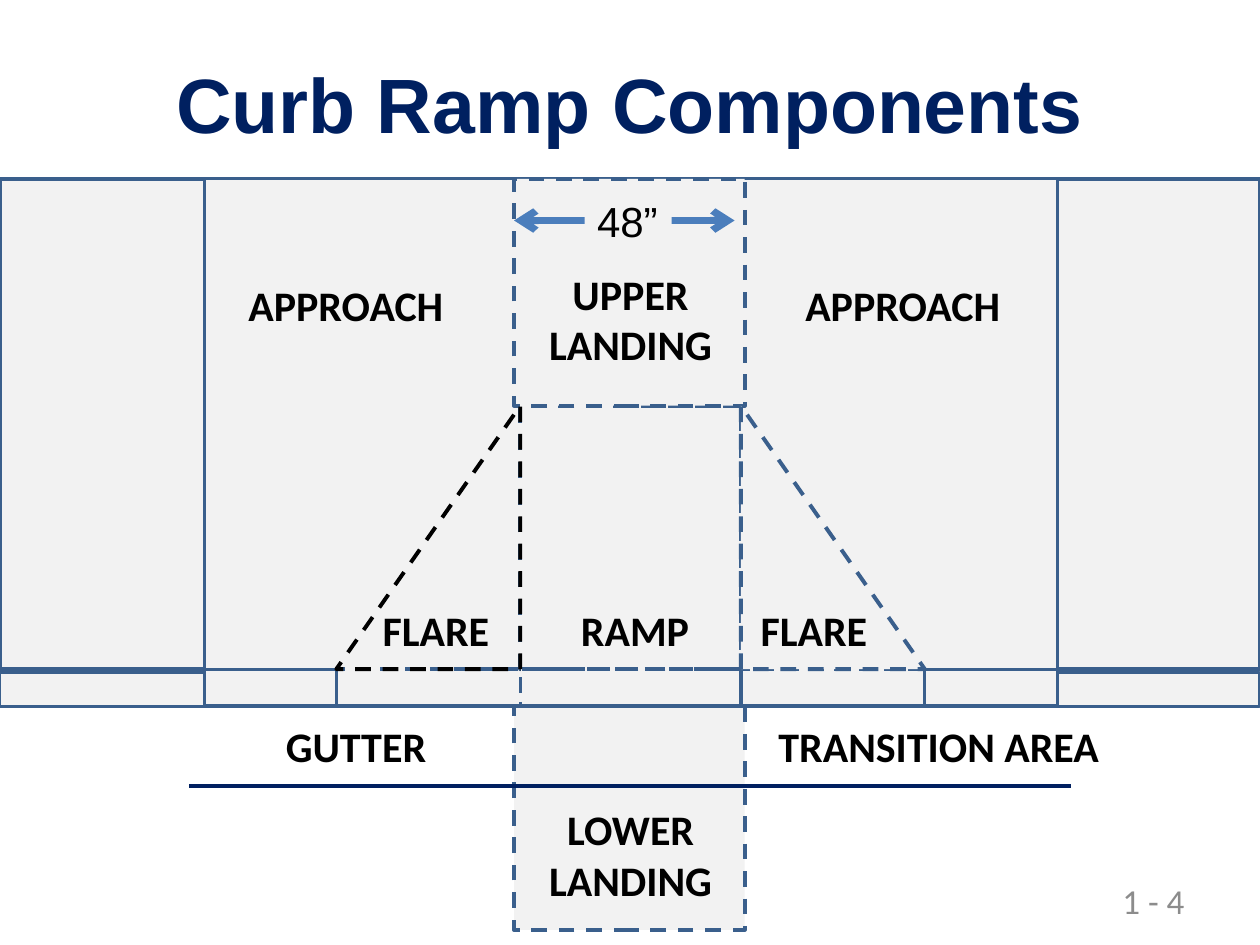
from pptx import Presentation
from pptx import util as u
from pptx.dml.color import RGBColor
from pptx.enum import dml, shapes, text
from pptx.oxml.ns import qn
from lxml import etree

I = u.Inches
SURFACE, EDGE, NAVY, ARROW = "F2F2F2", "3A5F8C", "002060", "4B7EBC"
BLACK, GREY, WHITE = "000000", "8C8C8C", "FFFFFF"


def colour(hex_string):
    return RGBColor.from_string(hex_string)


class Diagram:
    """Holds the slide and the style of its outlines and labels."""

    font, size = "Calibri", 24

    def __init__(self, slide):
        self.slide = slide
        slide.background.fill.solid()
        slide.background.fill.fore_color.rgb = colour(WHITE)

    def area(self, left, top, width, height, fill=None, line=EDGE, weight=2.25,
             dashed=False, kind=shapes.MSO_SHAPE.RECTANGLE, flipped=False):
        shape = self.slide.shapes.add_shape(kind, I(left), I(top), I(width), I(height))
        shape.shadow.inherit = False
        if fill:
            shape.fill.solid()
            shape.fill.fore_color.rgb = colour(fill)
        else:
            shape.fill.background()
        if line:
            shape.line.color.rgb = colour(line)
            shape.line.width = u.Pt(weight)
            if dashed:
                shape.line.dash_style = dml.MSO_LINE.DASH
        else:
            shape.line.fill.background()
        if flipped:
            shape._element.spPr.find(qn("a:xfrm")).set("flipH", "1")
        return shape

    def flare(self, left, top, width, height, **style):
        return self.area(left, top, width, height, dashed=True,
                         kind=shapes.MSO_SHAPE.RIGHT_TRIANGLE, **style)

    def line(self, left, right, y, line, weight, arrows=False):
        connector = self.slide.shapes.add_connector(
            shapes.MSO_CONNECTOR.STRAIGHT, I(left), I(y), I(right), I(y))
        connector.line.color.rgb = colour(line)
        connector.line.width = u.Pt(weight)
        properties = connector._element.spPr
        if arrows:
            for end in ("a:headEnd", "a:tailEnd"):
                etree.SubElement(properties.find(qn("a:ln")), qn(end), type="arrow")
        etree.SubElement(properties, qn("a:effectLst"))

    def label(self, left, top, width, height, *lines, **style):
        box = self.slide.shapes.add_textbox(I(left), I(top), I(width), I(height))
        self.add_text(box, lines, **style)

    def add_text(self, shape, lines, font=font, size=size, ink=BLACK, bold=True,
                 align=text.PP_ALIGN.CENTER, anchor=text.MSO_ANCHOR.TOP, wrap=True):
        frame = shape.text_frame
        frame.word_wrap = wrap
        frame.vertical_anchor = anchor
        for number, line in enumerate(lines):
            paragraph = frame.add_paragraph() if number else frame.paragraphs[0]
            paragraph.alignment = align
            run = paragraph.add_run()
            run.text = line
            run.font.name, run.font.size, run.font.bold = font, u.Pt(size), bold
            run.font.color.rgb = colour(ink)


def main():
    presentation = Presentation()
    presentation.slide_width, presentation.slide_height = I(10), I(7.5)
    diagram = Diagram(presentation.slides.add_slide(presentation.slide_layouts[6]))

    walk_top, ramp_top, curb_top, curb_height = 1.42, 3.22, 5.31, 0.29
    landing = dict(left=4.08, width=1.83, height=1.8, fill=SURFACE, dashed=True)
    ramp_left, ramp_width, flare_width, curb_width = 4.13, 1.75, 1.46, 1.05
    ramp_right = ramp_left + ramp_width
    flare_left = ramp_left - flare_width
    ramp_height = curb_top - ramp_top

    # Sidewalk, landings and ramp
    diagram.area(top=5.58, **landing)
    diagram.area(0, 5.34, 10, 0.27, SURFACE, weight=1.75)
    diagram.area(0, walk_top, 10, 3.89, SURFACE, weight=2)
    diagram.area(1.62, walk_top, 6.77, 4.18, SURFACE, weight=1.75)
    diagram.area(ramp_left, ramp_top, ramp_width, ramp_height, dashed=True)
    diagram.area(top=walk_top, **landing)

    # Curb segments, then the gutter line
    for left, width in ((ramp_left, ramp_width), (flare_left, flare_width),
                        (ramp_right, flare_width)):
        diagram.area(left, curb_top, width, curb_height, weight=2, dashed=True)
    for left in (flare_left - curb_width, ramp_right + flare_width):
        diagram.area(left, curb_top, curb_width, curb_height, weight=1.75)
    diagram.line(1.5, 8.5, 6.24, NAVY, 2)

    diagram.flare(flare_left, ramp_top, flare_width, ramp_height, line=BLACK, flipped=True)
    diagram.flare(ramp_right, ramp_top, flare_width, ramp_height, fill=SURFACE)

    # Labels
    left_aligned = text.PP_ALIGN.LEFT
    middle = text.MSO_ANCHOR.MIDDLE
    diagram.label(0.5, 0.3, 9, 1.03, "Curb Ramp Components",
                  font="Arial", size=44, ink=NAVY, anchor=middle)
    for left in (1.83, 6.25):
        diagram.label(left, 2.17, 1.83, 0.5, "APPROACH")
    for left, name in ((2.75, "FLARE"), (4.33, "RAMP"), (5.75, "FLARE")):
        diagram.label(left, 4.75, 1.42, 0.5, name)
    for top, name in ((2.08, "UPPER"), (6.33, "LOWER")):
        diagram.label(4.17, top, 1.67, 0.91, name, "LANDING")
    diagram.label(2.17, 5.67, 1.42, 0.5, "GUTTER", align=left_aligned)
    diagram.label(6.08, 5.67, 3.17, 0.5, "TRANSITION AREA", align=left_aligned)
    diagram.label(7.17, 6.95, 2.33, 0.4, "1 - 4", size=20, ink=GREY, bold=False,
                  align=text.PP_ALIGN.RIGHT, anchor=middle)

    # Landing width
    diagram.line(4.08, 5.83, 1.75, ARROW, 4, arrows=True)
    dimension = diagram.area(4.64, 1.5, 0.69, 0.5, SURFACE, line=None)
    diagram.add_text(dimension, ["48”"], font="Arial", bold=False,
                     align=left_aligned, wrap=False)

    presentation.save("out.pptx")


if __name__ == "__main__":
    main()
